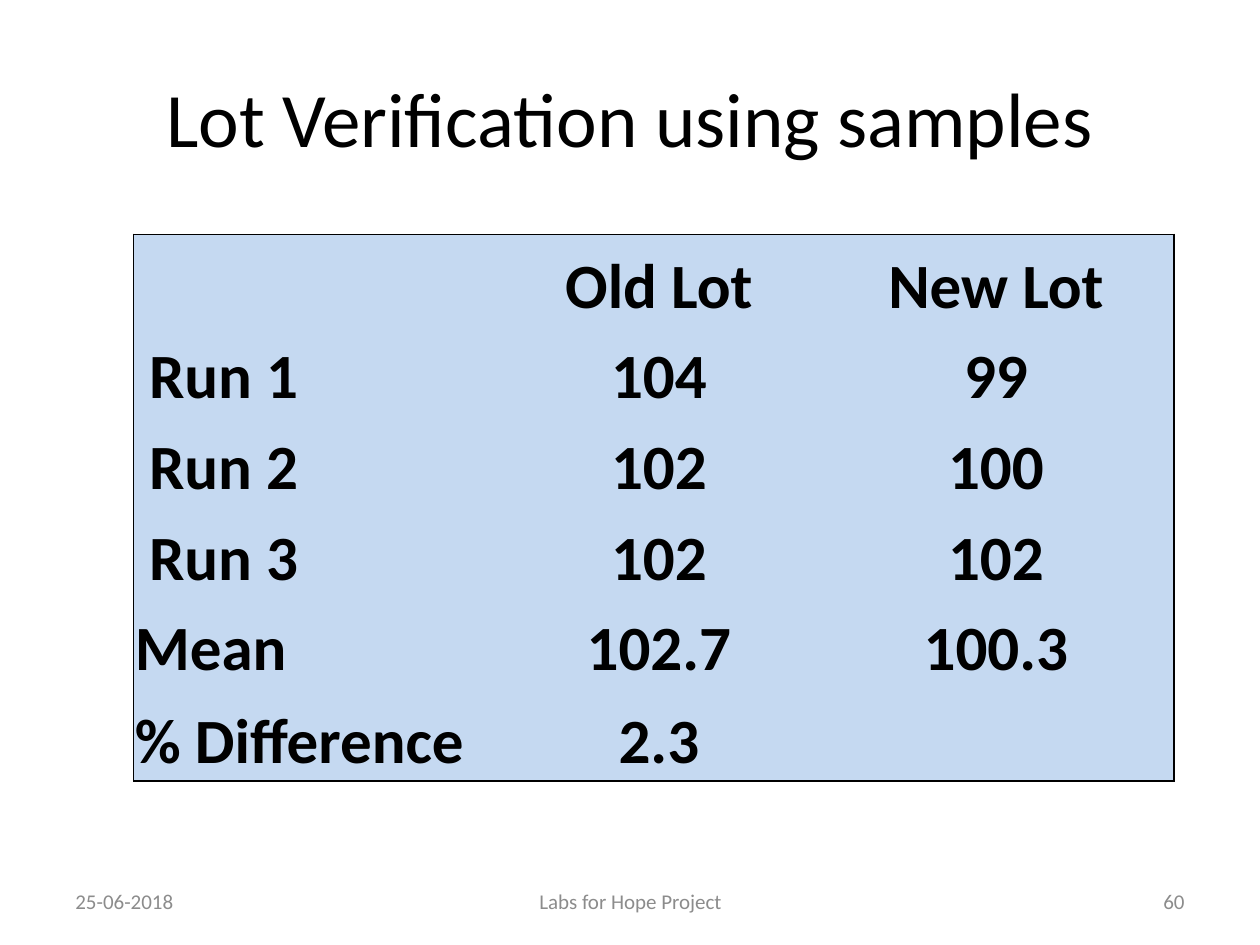
import pptx
import pptx.util
import pptx.dml.color
import pptx.enum.text
import pptx.oxml
import pptx.oxml.ns

Inches = pptx.util.Inches
Pt = pptx.util.Pt
ALIGN = pptx.enum.text.PP_ALIGN
ANCHOR = pptx.enum.text.MSO_ANCHOR
COLORS = {"text": "000000", "footer": "8C8C8C", "cell": "C5D9F1", "border": "000000"}


def write_text(paragraph, text, alignment, color, **font_values):
    paragraph.alignment = alignment
    run = paragraph.add_run()
    run.text = text
    run.font.color.rgb = pptx.dml.color.RGBColor.from_string(COLORS[color])
    for name, value in {"name": "Calibri", **font_values}.items():
        setattr(run.font, name, value)


def border_line(side, visible):
    namespace = pptx.oxml.ns.nsdecls("a")
    fill = f'<a:solidFill><a:srgbClr val="{COLORS["border"]}"/></a:solidFill>' if visible else "<a:noFill/>"
    return pptx.oxml.parse_xml(f'<a:ln{side} {namespace} w="{Pt(1)}">{fill}</a:ln{side}>')


presentation = pptx.Presentation()
presentation.slide_width = Inches(10)
presentation.slide_height = Inches(7.5)
slide = presentation.slides.add_slide(presentation.slide_layouts[6])

# Title and footer
text_boxes = [
    ("Lot Verification using samples", (0.5, 0.3, 9, 1.25), ALIGN.CENTER, "text", 44),
    ("25-06-2018", (0.5, 6.95, 2.33, 0.4), ALIGN.LEFT, "footer", 12),
    ("Labs for Hope Project", (3.42, 6.95, 3.17, 0.4), ALIGN.CENTER, "footer", 12),
    ("60", (7.17, 6.95, 2.33, 0.4), ALIGN.RIGHT, "footer", 12),
]
for text, place, alignment, color, size in text_boxes:
    frame = slide.shapes.add_textbox(*map(Inches, place)).text_frame
    for name, value in {"word_wrap": True, "vertical_anchor": ANCHOR.MIDDLE}.items():
        setattr(frame, name, value)
    write_text(frame.paragraphs[0], text, alignment, color, size=Pt(size))

# Lot comparison table
lot_rows = [
    ("", "Old Lot", "New Lot"),
    (" Run 1", "104", "99"),
    (" Run 2", "102", "100"),
    (" Run 3", "102", "102"),
    ("Mean", "102.7", "100.3"),
    ("% Difference", "2.3", ""),
]
column_widths = [2.91, 2.52, 2.83]
row_heights = [0.72] * 5 + [0.74]
last_row, last_column = len(lot_rows) - 1, len(column_widths) - 1
table = slide.shapes.add_table(
    len(lot_rows), len(column_widths), Inches(1.06), Inches(1.86),
    Inches(sum(column_widths)), Inches(sum(row_heights))).table
for name in ("first_row", "horz_banding"):
    setattr(table, name, False)
for column, width in zip(table.columns, column_widths):
    column.width = Inches(width)
for row, height in zip(table.rows, row_heights):
    row.height = Inches(height)

cell_format = {
    "margin_left": Inches(0.01), "margin_right": Inches(0.01),
    "margin_top": Inches(0.01), "margin_bottom": 0,
    "vertical_anchor": ANCHOR.BOTTOM,
}
for row_index, lot_row in enumerate(lot_rows):
    for column_index, text in enumerate(lot_row):
        cell = table.cell(row_index, column_index)
        for name, value in cell_format.items():
            setattr(cell, name, value)
        cell.fill.solid()
        cell.fill.fore_color.rgb = pptx.dml.color.RGBColor.from_string(COLORS["cell"])
        if text:
            alignment = ALIGN.CENTER if column_index else ALIGN.LEFT
            write_text(cell.text_frame.paragraphs[0], text, alignment, "text", size=Pt(36), bold=True)

        # Only the outer frame is drawn; lines must precede the fill
        outer_sides = {
            "L": column_index == 0, "R": column_index == last_column,
            "T": row_index == 0, "B": row_index == last_row,
        }
        properties = cell._tc.get_or_add_tcPr()
        for position, (side, visible) in enumerate(outer_sides.items()):
            properties.insert(position, border_line(side, visible))

presentation.save("out.pptx")
